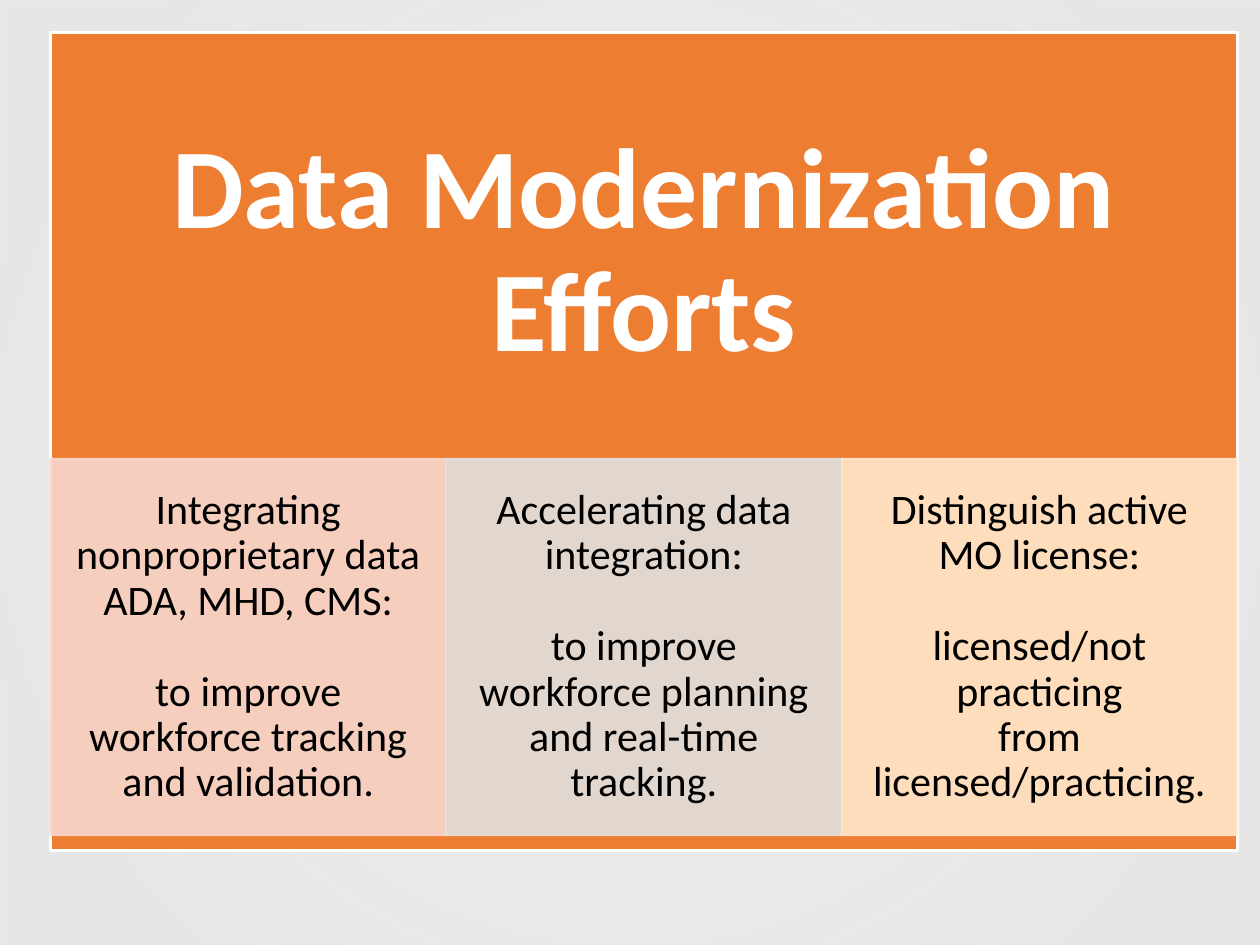
"""Build the data modernization efforts slide."""
import dataclasses

import lxml.etree
import pptx
import pptx.dml.color
import pptx.enum.shapes
import pptx.enum.text
import pptx.oxml
import pptx.oxml.ns
import pptx.util

Inches = pptx.util.Inches
Pt = pptx.util.Pt
rgb = pptx.dml.color.RGBColor.from_string


@dataclasses.dataclass(frozen=True)
class Theme:
    """Hold the colours and type sizes of the slide."""
    font: str = "Calibri"
    backdrop: str = "E7E6E6"
    panel: str = "ED7D31"
    light: str = "FFFFFF"
    dark: str = "000000"
    cards: tuple = ("F8D7CE", "E1E1E1", "FFE8CC")
    title_size: int = 65
    body_size: int = 24


THEME = Theme()
PANEL_LEFT, PANEL_TOP, PANEL_WIDTH, PANEL_HEIGHT = 0.4, 0.26, 9.42, 6.49
TITLE_HEIGHT = 3.5
CARD_TOP, CARD_HEIGHT = 3.64, 2.99
EFFORTS = (
    ("Integrating nonproprietary data ADA, MHD, CMS:",
     ("to improve workforce tracking and validation.",)),
    ("Accelerating data integration:",
     ("to improve workforce planning and real-time tracking.",)),
    ("Distinguish active MO license:",
     ("licensed/not practicing", "from", "licensed/practicing.")),
)


def set_all(target, values):
    """Set each attribute of the target from a dict."""
    for name, value in values.items():
        setattr(target, name, value)


def add_box(slide, place, color, line_color=None, line_width=0):
    """Add a flat rectangle with an optional outline."""
    box = slide.shapes.add_shape(
        pptx.enum.shapes.MSO_SHAPE.RECTANGLE, *map(Inches, place))
    box.shadow.inherit = False
    box.fill.solid()
    box.fill.fore_color.rgb = rgb(color)
    if line_color:
        box.line.color.rgb = rgb(line_color)
        box.line.width = Pt(line_width)
    else:
        box.line.fill.background()
    return box


def set_opacity(box, percent):
    """Make the fill and outline of a box partly transparent."""
    for color in box._element.spPr.iter(pptx.oxml.ns.qn("a:srgbClr")):
        alpha = lxml.etree.SubElement(color, pptx.oxml.ns.qn("a:alpha"))
        alpha.set("val", str(percent * 1000))


def add_backdrop(slide, width, height):
    """Cover the slide with a soft circular gradient."""
    backdrop = add_box(slide, (0, 0, width, height), THEME.backdrop)
    stops = "".join(
        f'<a:gs pos="{position * 1000}"><a:srgbClr val="{THEME.backdrop}">'
        f'<a:alpha val="{opacity * 1000}"/></a:srgbClr></a:gs>'
        for position, opacity in ((10, 68), (85, 97)))
    gradient = pptx.oxml.parse_xml(
        f'<a:gradFill {pptx.oxml.ns.nsdecls("a")} rotWithShape="1">'
        f'<a:gsLst>{stops}</a:gsLst><a:path path="circle">'
        '<a:fillToRect l="50000" t="50000" r="50000" b="50000"/>'
        '</a:path></a:gradFill>')
    properties = backdrop._element.spPr
    solid = properties.find(pptx.oxml.ns.qn("a:solidFill"))
    properties.replace(solid, gradient)


def write_text(holder, lines, side, edge, font_values, color):
    """Write centred lines, each given with its space before in points."""
    frame = holder.text_frame
    set_all(frame, {
        "word_wrap": True,
        "vertical_anchor": pptx.enum.text.MSO_ANCHOR.MIDDLE,
        "margin_left": Inches(side), "margin_right": Inches(side),
        "margin_top": Inches(edge), "margin_bottom": Inches(edge),
    })
    for index, (text, space) in enumerate(lines):
        paragraph = frame.add_paragraph() if index else frame.paragraphs[0]
        set_all(paragraph, {
            "alignment": pptx.enum.text.PP_ALIGN.CENTER,
            "line_spacing": 0.9, "space_before": Pt(space),
        })
        run = paragraph.add_run()
        run.text = text
        set_all(run.font, {"name": THEME.font, **font_values})
        run.font.color.rgb = rgb(color)


def add_title(slide, text):
    """Add the headline over the upper part of the panel."""
    title = slide.shapes.add_textbox(
        *map(Inches, (PANEL_LEFT, PANEL_TOP, PANEL_WIDTH, TITLE_HEIGHT)))
    write_text(title, [(text, 0)], 0.51, 0.51,
               {"size": Pt(THEME.title_size), "bold": True}, THEME.light)


def add_card(slide, index, heading, details):
    """Add one effort with its heading and spaced details."""
    width = PANEL_WIDTH / len(EFFORTS)
    color = THEME.cards[index]
    card = add_box(
        slide, (PANEL_LEFT + index * width, CARD_TOP, width, CARD_HEIGHT),
        color, color, 1)
    set_opacity(card, 90)
    lines = [(heading, 0)]
    lines += [(detail, 0 if row else 26) for row, detail in enumerate(details)]
    write_text(card, lines, 0.19, 0.03,
               {"size": Pt(THEME.body_size)}, THEME.dark)


def main():
    """Build and save the slide."""
    deck = pptx.Presentation()
    set_all(deck, {"slide_width": Inches(10), "slide_height": Inches(7.5)})
    slide = deck.slides.add_slide(deck.slide_layouts[6])
    add_backdrop(slide, 10, 7.5)
    add_box(slide, (PANEL_LEFT, PANEL_TOP, PANEL_WIDTH, PANEL_HEIGHT),
            THEME.panel, THEME.light, 1.5)
    add_title(slide, "Data Modernization Efforts")
    for index, (heading, details) in enumerate(EFFORTS):
        add_card(slide, index, heading, details)
    deck.save("out.pptx")


if __name__ == "__main__":
    main()
